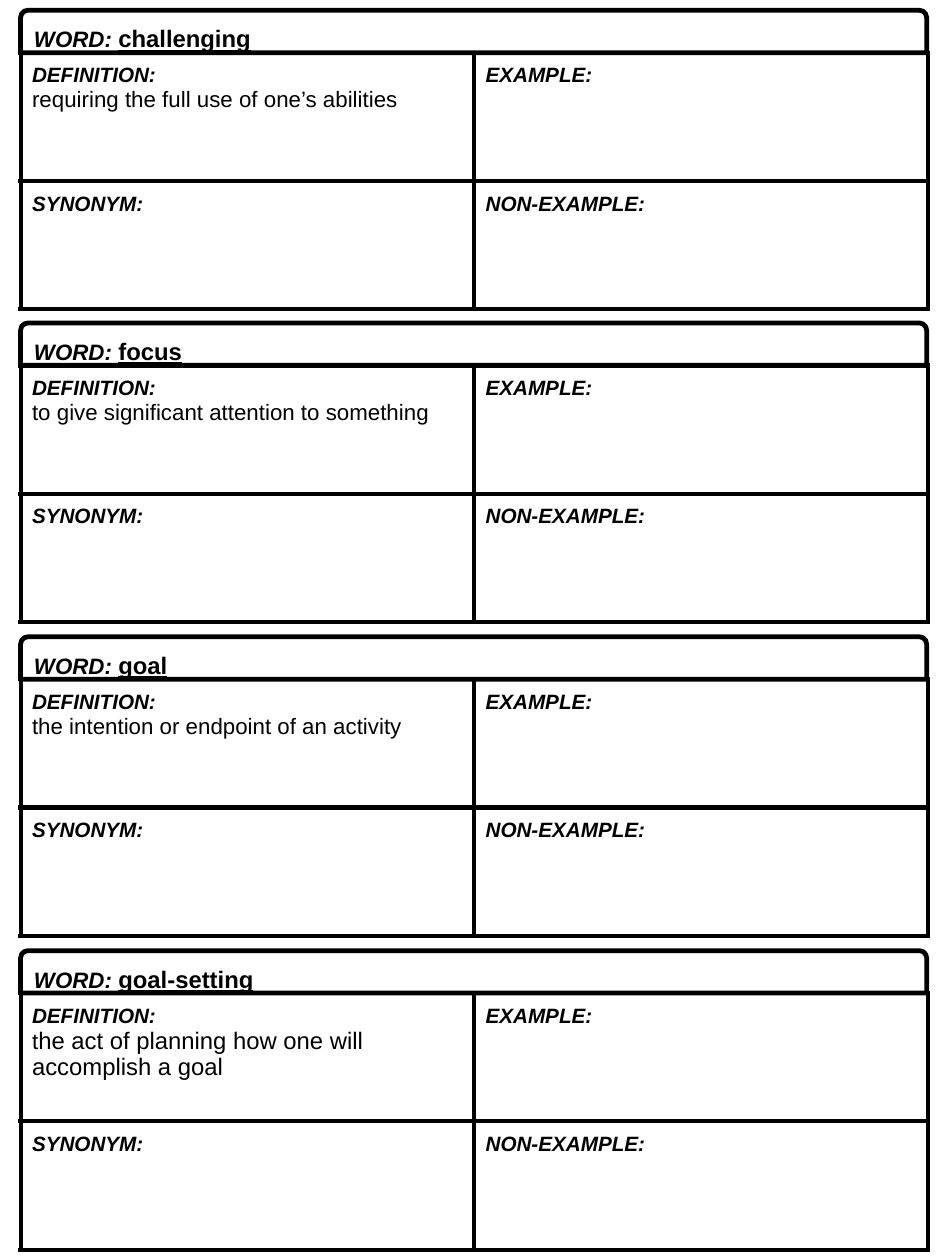
import pptx
import pptx.dml.color
import pptx.enum.shapes
import pptx.enum.text
import pptx.oxml
import pptx.oxml.ns
import pptx.util
from pptx.util import Inches

COLORS = {"ink": "000000", "paper": "FFFFFF"}
LEFT, WIDTH = 0.18, 7.91
HEADER_HEIGHT, ROW_HEIGHT, COLUMN_WIDTH = 0.37, 1.12, 3.96
LINE_WIDTH = pptx.util.Pt(3)
LABELS = [["DEFINITION:", "EXAMPLE:"], ["SYNONYM:", "NON-EXAMPLE:"]]

# Top of the card, word, and definition as (text, size) pieces
CARDS = [
    (0.09, "challenging", [("requiring the full use of one’s abilities", 14)]),
    (2.82, "focus", [("to give significant attention to something", 14)]),
    (5.56, "goal", [("the intention or endpoint of an activity", 14)]),
    (8.3, "goal-setting",
     [("t", 14), ("he act of planning how one will accomplish a goal", 15)]),
]


def add_text(paragraph, text, size=13, bold=True, italic=True, underline=False):
    paragraph.alignment = pptx.enum.text.PP_ALIGN.LEFT
    run = paragraph.add_run()
    run.text = text
    font = run.font
    font.name = "Arial"
    font.size = pptx.util.Pt(size)
    font.bold = bold
    font.italic = italic
    font.underline = underline
    font.color.rgb = pptx.dml.color.RGBColor.from_string(COLORS["ink"])


def style_cell(cell):
    """Give the cell even margins, a paper fill and a border on all sides."""
    cell.margin_left = cell.margin_right = Inches(0.1)
    cell.margin_top = cell.margin_bottom = Inches(0.1)
    properties = cell._tc.get_or_add_tcPr()
    for side in ("lnL", "lnR", "lnT", "lnB"):
        properties.append(pptx.oxml.parse_xml(
            f'<a:{side} {pptx.oxml.ns.nsdecls("a")} w="{LINE_WIDTH}">'
            f'<a:solidFill><a:srgbClr val="{COLORS["ink"]}"/></a:solidFill>'
            f'</a:{side}>'))
    cell.fill.solid()
    cell.fill.fore_color.rgb = pptx.dml.color.RGBColor.from_string(COLORS["paper"])


presentation = pptx.Presentation()
presentation.slide_width = Inches(8.25)
presentation.slide_height = Inches(11)
slide = presentation.slides.add_slide(presentation.slide_layouts[6])

for top, word, definition in CARDS:
    table = slide.shapes.add_table(
        2, 2, Inches(LEFT), Inches(top + HEADER_HEIGHT),
        Inches(2 * COLUMN_WIDTH), Inches(2 * ROW_HEIGHT)).table
    table.first_row = False
    table.horz_banding = False
    for column in table.columns:
        column.width = Inches(COLUMN_WIDTH)
    for row_index, labels in enumerate(LABELS):
        table.rows[row_index].height = Inches(ROW_HEIGHT)
        for column_index, label in enumerate(labels):
            cell = table.cell(row_index, column_index)
            style_cell(cell)
            add_text(cell.text_frame.paragraphs[0], label)
    paragraph = table.cell(0, 0).text_frame.add_paragraph()
    for text, size in definition:
        add_text(paragraph, text, size=size, bold=False, italic=False)

    header = slide.shapes.add_shape(
        pptx.enum.shapes.MSO_SHAPE.ROUND_2_SAME_RECTANGLE,
        Inches(LEFT), Inches(top), Inches(WIDTH), Inches(HEADER_HEIGHT))
    header.adjustments[0] = 0.17
    header.shadow.inherit = False
    header.fill.solid()
    header.fill.fore_color.rgb = pptx.dml.color.RGBColor.from_string(COLORS["paper"])
    header.line.color.rgb = pptx.dml.color.RGBColor.from_string(COLORS["ink"])
    header.line.width = LINE_WIDTH
    frame = header.text_frame
    frame.word_wrap = True
    frame.vertical_anchor = pptx.enum.text.MSO_ANCHOR.TOP
    frame.margin_left = frame.margin_right = Inches(0.1)
    frame.margin_top = frame.margin_bottom = Inches(0.1)
    add_text(frame.paragraphs[0], "WORD: ", size=14)
    add_text(frame.paragraphs[0], word, size=15, italic=False, underline=True)

presentation.save("out.pptx")
